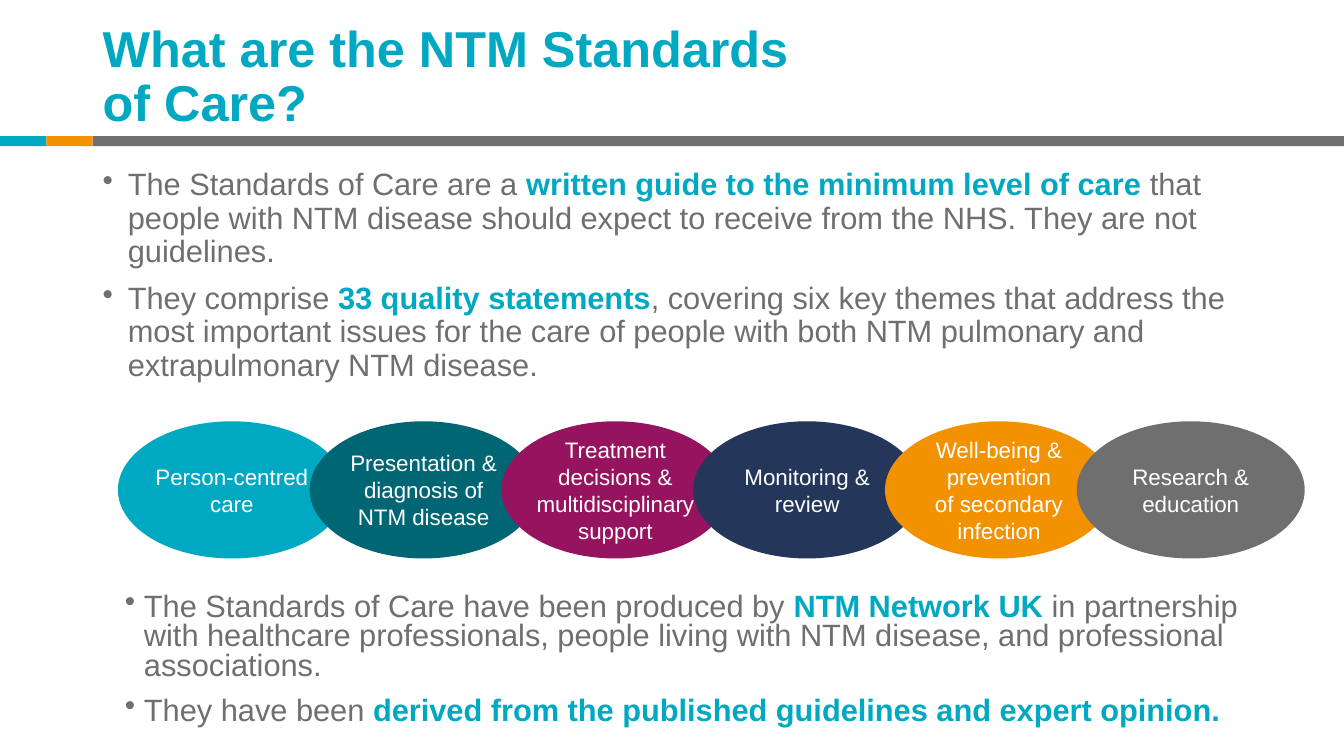
import pptx
import pptx.util
import pptx.dml.color
import pptx.enum.shapes
import pptx.enum.text
import pptx.oxml.ns
from lxml import etree

Inches = pptx.util.Inches
Pt = pptx.util.Pt
SHAPE = pptx.enum.shapes.MSO_SHAPE
ALIGN = pptx.enum.text.PP_ALIGN
ANCHOR = pptx.enum.text.MSO_ANCHOR

COLORS = {
    "teal": "00A9C1",
    "deep": "006674",
    "plum": "96145F",
    "navy": "24375B",
    "orange": "F39200",
    "grey": "706F6F",
    "white": "FFFFFF",
}

# Each point is a list of (text, is key phrase) runs
INTRO = [
    [("The Standards of Care are a ", False),
     ("written guide to the minimum level of care ", True),
     ("that people with NTM disease should expect to receive from the NHS. "
      "They are not guidelines.", False)],
    [("They comprise ", False),
     ("33 quality statements", True),
     (", covering six key themes that address the most important issues for "
      "the care of people with both NTM pulmonary and extrapulmonary NTM "
      "disease.", False)],
]
ORIGIN = [
    [("The Standards of Care have been produced by ", False),
     ("NTM Network UK ", True),
     ("in partnership with healthcare professionals, people living with NTM "
      "disease, and professional associations.", False)],
    [("They have been ", False),
     ("derived from the published guidelines and expert opinion.", True)],
]
THEMES = [
    ("teal", ["Person-centred care"]),
    ("deep", ["Presentation & diagnosis of NTM disease"]),
    ("plum", ["Treatment decisions &", "multidisciplinary support"]),
    ("navy", ["Monitoring & review"]),
    ("orange", ["Well-being & prevention", "of secondary infection"]),
    ("grey", ["Research & education"]),
]


def get_color(name):
    return pptx.dml.color.RGBColor.from_string(COLORS[name])


def add_run(para, text, size, color, bold=False):
    run = para.add_run()
    run.text = text
    font = run.font
    font.name = "Arial"
    font.size = Pt(size)
    font.bold = bold
    font.color.rgb = get_color(color)


def add_shape(slide, kind, box, color):
    shape = slide.shapes.add_shape(kind, *map(Inches, box))
    shape.shadow.inherit = False
    shape.fill.solid()
    shape.fill.fore_color.rgb = get_color(color)
    shape.line.fill.background()
    return shape


def add_frame(slide, box):
    frame = slide.shapes.add_textbox(*map(Inches, box)).text_frame
    frame.word_wrap = True
    return frame


def get_para(frame, index):
    return frame.add_paragraph() if index else frame.paragraphs[0]


def add_title(slide, box):
    frame = add_frame(slide, box)
    frame.vertical_anchor = ANCHOR.MIDDLE
    para = frame.paragraphs[0]
    para.line_spacing = 0.9
    add_run(para, "What are the NTM Standards", 36, "teal", True)
    para.add_line_break()
    add_run(para, "of Care?", 36, "teal", True)


def add_band(slide, box):
    left, top, width, height = box
    tab = 0.46
    parts = [("teal", 0, tab), ("orange", tab, tab),
             ("grey", 2 * tab, width - 2 * tab)]
    for color, shift, span in parts:
        add_shape(slide, SHAPE.RECTANGLE, (left + shift, top, span, height), color)


def add_points(slide, box, points, margin, hang, spacing, before, after):
    frame = add_frame(slide, box)
    for index, point in enumerate(points):
        para = get_para(frame, index)
        props = para._p.get_or_add_pPr()
        props.set("marL", str(Inches(margin)))
        props.set("indent", str(-Inches(hang)))
        bullet = etree.SubElement(props, pptx.oxml.ns.qn("a:buChar"))
        bullet.set("char", "•")
        para.line_spacing = spacing
        para.space_before = Pt(before if index else 0)
        para.space_after = Pt(after)
        for text, key in point:
            add_run(para, text, 22, "teal" if key else "grey", key)


def add_themes(slide, box):
    left, top, width, height = box
    oval = 2.24
    step = (width - oval) / (len(THEMES) - 1)
    for index, (color, lines) in enumerate(THEMES):
        shape = add_shape(slide, SHAPE.OVAL,
                          (left + index * step, top, oval, height), color)
        shape.line.color.rgb = get_color(color)
        shape.line.width = Pt(1.5)
        frame = shape.text_frame
        frame.word_wrap = True
        frame.vertical_anchor = ANCHOR.MIDDLE
        frame.margin_left = frame.margin_right = 0
        frame.margin_top = frame.margin_bottom = 0
        for row, line in enumerate(lines):
            para = get_para(frame, row)
            para.alignment = ALIGN.CENTER
            add_run(para, line, 16, "white")


def main():
    deck = pptx.Presentation()
    deck.slide_width = Inches(13.33)
    deck.slide_height = Inches(7.5)
    slide = deck.slides.add_slide(deck.slide_layouts[6])

    # Heading
    add_band(slide, (0, 1.35, 13.33, 0.1))
    add_title(slide, (0.92, 0.28, 8.2, 0.99))

    # What the standards are, and their six themes
    add_points(slide, (0.92, 1.63, 11.9, 2.4), INTRO, 0.25, 0.25, 0.9, 10, 0)
    add_themes(slide, (1.18, 4.19, 11.75, 1.34))

    # Where the standards come from
    add_points(slide, (0.92, 5.84, 11.9, 1.51), ORIGIN, 0.41, 0.19, 0.8, 5, 6)

    deck.save("out.pptx")


if __name__ == "__main__":
    main()
